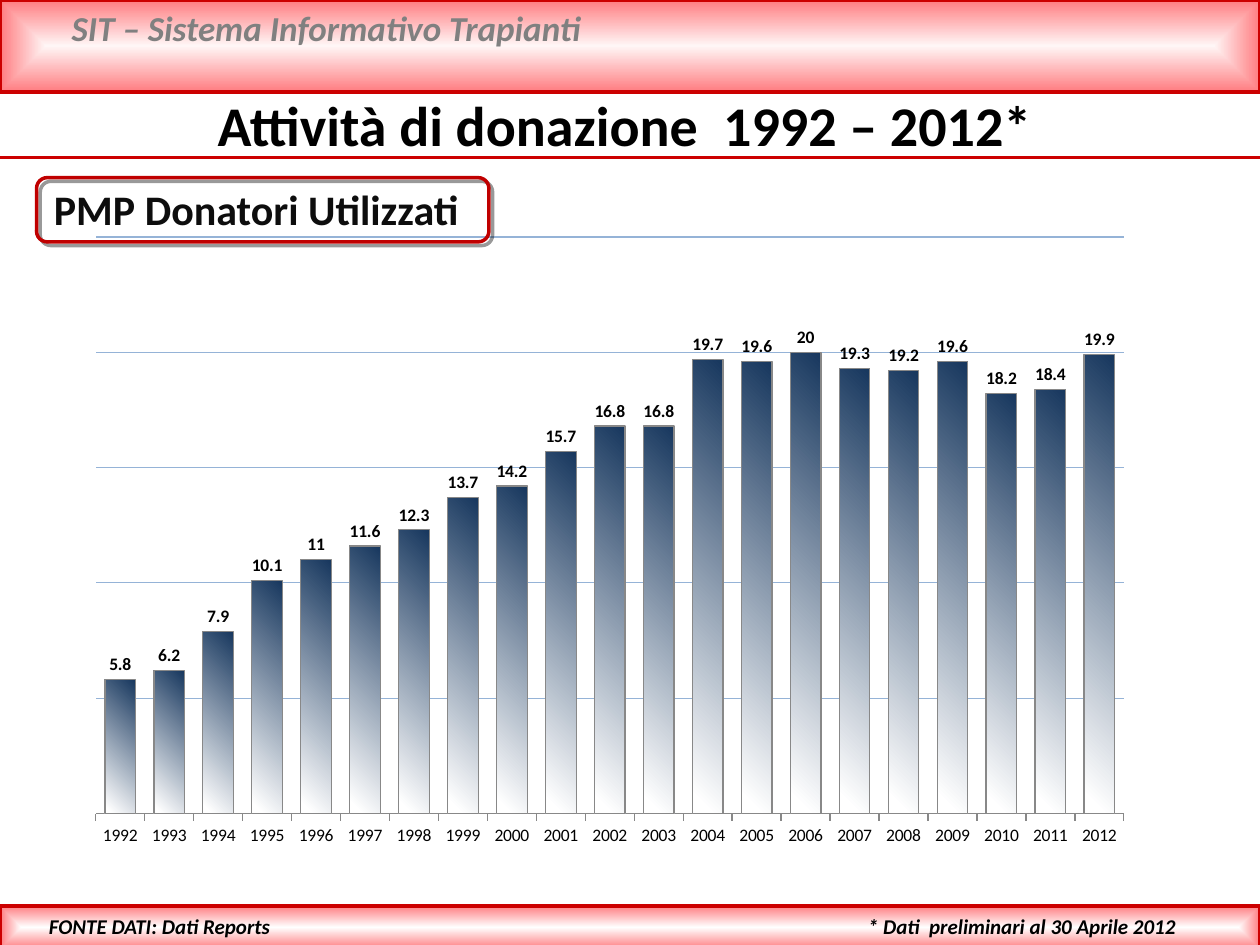
from lxml import etree
from pptx import Presentation
from pptx import oxml
from pptx.chart import data
from pptx.dml.color import RGBColor
from pptx.enum import chart as ch, shapes, text
from pptx.oxml import ns
from pptx.util import Inches, Pt

RED = RGBColor(0xCC, 0x00, 0x00)
DARK = RGBColor(0xC0, 0x00, 0x00)
PINK = RGBColor(0xFF, 0x7C, 0x80)
PALE = RGBColor(0xFF, 0xF6, 0xF6)
WHITE = RGBColor(0xFF, 0xFF, 0xFF)
BLACK = RGBColor(0x00, 0x00, 0x00)
INK = RGBColor(0x0D, 0x0D, 0x0D)
GRAY = RGBColor(0x80, 0x80, 0x80)
EDGE = RGBColor(0x88, 0x88, 0x88)
NAVY = RGBColor(0x17, 0x37, 0x5E)
GRID = RGBColor(0x95, 0xB3, 0xD7)

FONT = "Calibri"
FIRST = 1992
RATES = (5.8, 6.2, 7.9, 10.1, 11, 11.6, 12.3, 13.7, 14.2, 15.7, 16.8,
         16.8, 19.7, 19.6, 20, 19.3, 19.2, 19.6, 18.2, 18.4, 19.9)
CENTER = ('<a:path path="shape"><a:fillToRect l="50000" t="50000" '
          'r="50000" b="50000"/></a:path>')
SLANT = '<a:lin ang="8100000" scaled="0"/>'


def style(obj, **opts):
    for key, val in opts.items():
        setattr(obj, key, val)


def ink(font, size, color=BLACK, **opts):
    style(font, name=FONT, size=Pt(size), **opts)
    font.color.rgb = color


def stroke(line, color, width):
    line.color.rgb = color
    line.width = Pt(width)


def blend(owner, fill, stops, shade):
    fill.gradient()
    grad = owner._element.xpath(".//a:gradFill")[0]
    for child in list(grad):
        grad.remove(child)
    marks = "".join(f'<a:gs pos="{pos * 1000}"><a:srgbClr val="{color}"/></a:gs>'
                    for pos, color in stops)
    root = oxml.parse_xml(f'<a:gradFill {ns.nsdecls("a")}>'
                          f'<a:gsLst>{marks}</a:gsLst>{shade}</a:gradFill>')
    grad.extend(list(root))


def band(slide, top, height, core):
    bar = slide.shapes.add_shape(shapes.MSO_SHAPE.RECTANGLE, 0, Inches(top),
                                 Inches(10), Inches(height))
    bar.shadow.inherit = False
    blend(bar, bar.fill, ((0, core), (100, PINK)), CENTER)
    stroke(bar.line, RED, 2)


def rule(slide, top):
    line = slide.shapes.add_connector(shapes.MSO_CONNECTOR.STRAIGHT, 0,
                                      Inches(top), Inches(10), Inches(top))
    stroke(line.line, RED, 2)
    etree.SubElement(line._element.spPr, ns.qn("a:effectLst"))


def write(shape, words, size, color=BLACK, align=text.PP_ALIGN.LEFT, **opts):
    frame = shape.text_frame
    style(frame, word_wrap=True, auto_size=text.MSO_AUTO_SIZE.NONE,
          vertical_anchor=text.MSO_ANCHOR.TOP)
    frame.text = words
    para = frame.paragraphs[0]
    para.alignment = align
    ink(para.runs[0].font, size, color, bold=True, **opts)


def label(slide, box, words, size, color=BLACK, **opts):
    shape = slide.shapes.add_textbox(*map(Inches, box))
    write(shape, words, size, color, **opts)


def head(slide, words):
    title = slide.shapes.title
    style(title, left=0, top=Inches(0.67), width=Inches(9.92),
          height=Inches(0.64))
    write(title, words, 32, align=text.PP_ALIGN.CENTER)


def frame(slide, box):
    shape = slide.shapes.add_shape(shapes.MSO_SHAPE.ROUNDED_RECTANGLE,
                                   *map(Inches, box))
    shape.shadow.inherit = False
    shape.fill.background()
    stroke(shape.line, DARK, 2)
    effect = shape._element.spPr.find(ns.qn("a:effectLst"))
    effect.append(oxml.parse_xml(
        f'<a:outerShdw {ns.nsdecls("a")} blurRad="0" dist="{Pt(3)}" '
        f'dir="2700000" algn="tl" rotWithShape="0"><a:srgbClr val="{BLACK}">'
        '<a:alpha val="40000"/></a:srgbClr></a:outerShdw>'))


def place(chart):
    plot = chart._chartSpace.chart.plotArea
    for old in plot.findall(ns.qn("c:layout")):
        plot.remove(old)
    sizes = {"x": 0.02, "y": 0.02, "w": 0.96, "h": 0.91}
    marks = '<c:layoutTarget val="inner"/>'
    marks += "".join(f'<c:{key}Mode val="edge"/>' for key in "xy")
    marks += "".join(f'<c:{key} val="{val}"/>' for key, val in sizes.items())
    plot.insert(0, oxml.parse_xml(
        f'<c:layout {ns.nsdecls("c")}><c:manualLayout>{marks}'
        '</c:manualLayout></c:layout>'))


def graph(slide, box):
    table = data.CategoryChartData()
    table.categories = [str(FIRST + step) for step in range(len(RATES))]
    table.add_series("PMP", RATES)
    chart = slide.shapes.add_chart(ch.XL_CHART_TYPE.COLUMN_CLUSTERED,
                                   *map(Inches, box), table).chart
    style(chart, has_legend=False, has_title=False)
    ink(chart.font, 10)
    place(chart)
    axis = chart.value_axis
    style(axis, minimum_scale=0, maximum_scale=25, major_unit=5,
          has_major_gridlines=True, visible=False)
    stroke(axis.major_gridlines.format.line, GRID, 0.75)
    base = chart.category_axis
    base.major_tick_mark = ch.XL_TICK_MARK.OUTSIDE
    stroke(base.format.line, EDGE, 0.75)
    plot = chart.plots[0]
    style(plot, gap_width=60, overlap=-20, vary_by_categories=False,
          has_data_labels=True)
    tags = plot.data_labels
    style(tags, show_value=True,
          position=ch.XL_LABEL_POSITION.OUTSIDE_END)
    ink(tags.font, 10, bold=True)
    bars = plot.series[0]
    blend(bars, bars.format.fill, ((0, NAVY), (96, WHITE)), SLANT)
    stroke(bars.format.line, EDGE, 0.75)


def main():
    deck = Presentation()
    style(deck, slide_width=Inches(10), slide_height=Inches(7.5))
    slide = deck.slides.add_slide(deck.slide_layouts[5])
    band(slide, 0, 0.73, PALE)
    label(slide, (0.47, 0, 8.98, 0.44), "SIT – Sistema Informativo Trapianti",
          20, GRAY, italic=True)
    band(slide, 7.19, 0.34, WHITE)
    rule(slide, 1.25)
    graph(slide, (0.59, 1.78, 8.5, 5.03))
    head(slide, "Attività di donazione  1992 – 2012*")
    label(slide, (0.33, 1.41, 3.57, 0.51), "PMP Donatori Utilizzati", 24, INK)
    frame(slide, (0.29, 1.41, 3.59, 0.51))
    label(slide, (0.29, 7.2, 2.2, 0.3), "FONTE DATI: Dati Reports", 12,
          italic=True)
    label(slide, (6.79, 7.2, 3.21, 0.3),
          "* Dati  preliminari al 30 Aprile 2012", 12, italic=True)
    deck.save("out.pptx")


if __name__ == "__main__":
    main()
